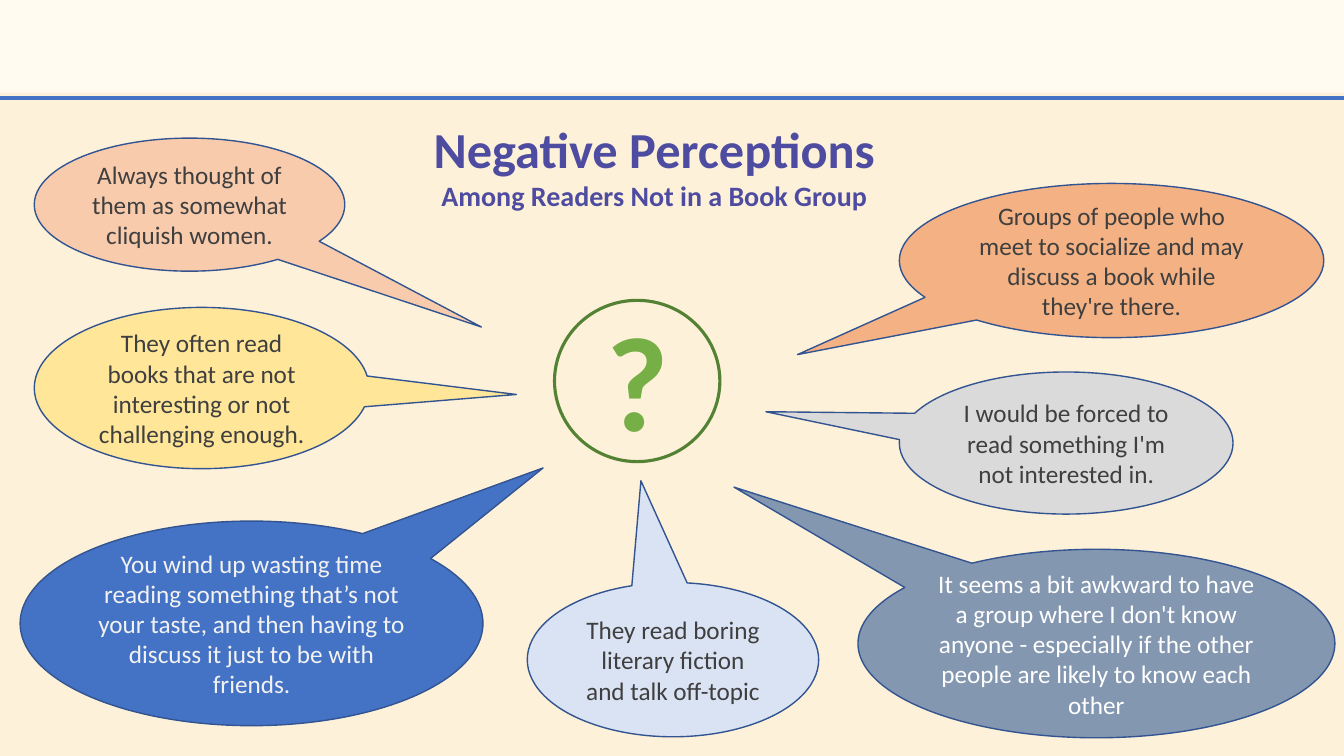
from dataclasses import dataclass
from lxml.etree import SubElement
from pptx import Presentation
from pptx.dml.color import RGBColor
from pptx.enum.shapes import MSO_CONNECTOR, MSO_SHAPE
from pptx.enum.text import MSO_ANCHOR, MSO_AUTO_SIZE, PP_ALIGN
from pptx.oxml.ns import qn
from pptx.util import Inches, Pt


@dataclass(frozen=True)
class Theme:
    face: str = "Calibri"
    # Colours
    back: str = "FEF1D9"
    band: str = "FFFBF1"
    blue: str = "4472C4"
    title: str = "4E4CA0"
    edge: str = "325491"
    dark: str = "3F3F3F"
    pale: str = "F2F2F2"
    white: str = "FFFFFF"
    mark: str = "76AF45"
    ring: str = "548235"
    # Type sizes in points
    head: int = 36
    sub: int = 20
    body: int = 18
    huge: int = 96


THEME = Theme()
WIDTH = 13.33

# Each bubble: place, tip offset, fill, text colour, words
BUBBLES = [
    ((5.23, 5.78, 2.89, 1.53), (-0.11, -1.16), "DAE3F3", THEME.dark,
     "They read boring literary fiction and talk off-topic"),
    ((8.51, 5.45, 4.73, 1.87), (-0.76, -0.83), "8497B0", THEME.white,
     "It seems a bit awkward to have a group where I don't know anyone - "
     "especially if the other people are likely to know each other"),
    ((8.92, 3.69, 3.31, 1.41), (-0.9, -0.22), "DADADA", THEME.dark,
     "I would be forced to read something I'm not interested in."),
    ((0.2, 5.17, 4.59, 2.03), (0.63, -0.76), THEME.blue, THEME.pale,
     "You wind up wasting time reading something that’s not your taste, "
     "and then having to discuss it just to be with friends."),
    ((0.34, 1.37, 3.08, 1.32), (0.94, 0.92), "F8CBAD", THEME.dark,
     "Always thought of them as somewhat cliquish women."),
    ((0.34, 3.05, 3.32, 1.6), (0.94, 0.04), "FFE699", THEME.dark,
     "They often read books that are not interesting or not "
     "challenging enough."),
    ((8.92, 1.82, 4.21, 1.53), (-0.74, 0.61), "F4B183", THEME.dark,
     "Groups of people who meet to socialize and may discuss a book "
     "while they're there."),
]


def paint(fill, tone):
    fill.solid()
    fill.fore_color.rgb = RGBColor.from_string(tone)


def assign(item, values):
    for name, value in values.items():
        setattr(item, name, value)


def write(para, words, size, tone, bold=False):
    run = para.add_run()
    run.text = words
    assign(run.font, {"name": THEME.face, "size": Pt(size), "bold": bold})
    run.font.color.rgb = RGBColor.from_string(tone)


def add_form(shapes, kind, place, fill=None, edge=None, width=1):
    form = shapes.add_shape(kind, *map(Inches, place))
    form.shadow.inherit = False
    if fill:
        paint(form.fill, fill)
    else:
        form.fill.background()
    if edge:
        paint(form.line.fill, edge)
        form.line.width = Pt(width)
    else:
        form.line.fill.background()
    return form


def add_rule(shapes, top):
    rule = shapes.add_connector(MSO_CONNECTOR.STRAIGHT, 0, Inches(top),
                                Inches(WIDTH), Inches(top))
    paint(rule.line.fill, THEME.blue)
    rule.line.width = Pt(3)
    SubElement(rule._element.spPr, qn("a:effectLst"))


def set_title(title, place):
    spots = map(Inches, place)
    assign(title, dict(zip(("left", "top", "width", "height"), spots)))
    assign(title.text_frame, {"word_wrap": True,
                              "auto_size": MSO_AUTO_SIZE.NONE,
                              "vertical_anchor": MSO_ANCHOR.TOP})
    para = title.text_frame.paragraphs[0]
    para.alignment = PP_ALIGN.CENTER
    write(para, "Negative Perceptions", THEME.head, THEME.title, True)
    para.add_line_break()
    write(para, "Among Readers Not in a Book Group", THEME.sub,
          THEME.title, True)


def add_bubble(shapes, place, tip, fill, tone, words):
    form = add_form(shapes, MSO_SHAPE.OVAL_CALLOUT, place, fill, THEME.edge)
    for index, shift in enumerate(tip):
        form.adjustments[index] = shift
    assign(form.text_frame, {"word_wrap": True,
                             "vertical_anchor": MSO_ANCHOR.MIDDLE})
    para = form.text_frame.paragraphs[0]
    para.alignment = PP_ALIGN.CENTER
    write(para, words, THEME.body, tone)


def add_mark(shapes):
    group = shapes.add_group_shape().shapes
    box = group.add_textbox(*map(Inches, (5.92, 2.9, 0.83, 1.72)))
    assign(box.text_frame, {"word_wrap": False,
                            "auto_size": MSO_AUTO_SIZE.SHAPE_TO_FIT_TEXT})
    write(box.text_frame.paragraphs[0], "?", THEME.huge, THEME.mark, True)
    add_form(group, MSO_SHAPE.OVAL, (5.5, 2.98, 1.64, 1.6),
             edge=THEME.ring, width=2.25)


def main():
    deck = Presentation()
    assign(deck, {"slide_width": Inches(WIDTH), "slide_height": Inches(7.5)})
    slide = deck.slides.add_slide(deck.slide_layouts[5])
    shapes = slide.shapes
    # Backdrop and top band
    paint(slide.background.fill, THEME.back)
    add_form(shapes, MSO_SHAPE.RECTANGLE, (0, 0, WIDTH, 0.92), THEME.band)
    add_rule(shapes, 0.97)
    # Heading
    set_title(shapes.title, (3.26, 1.12, 6.46, 1.04))
    # Opinions around the question mark
    for bubble in BUBBLES:
        add_bubble(shapes, *bubble)
    add_mark(shapes)
    deck.save("out.pptx")


if __name__ == "__main__":
    main()
